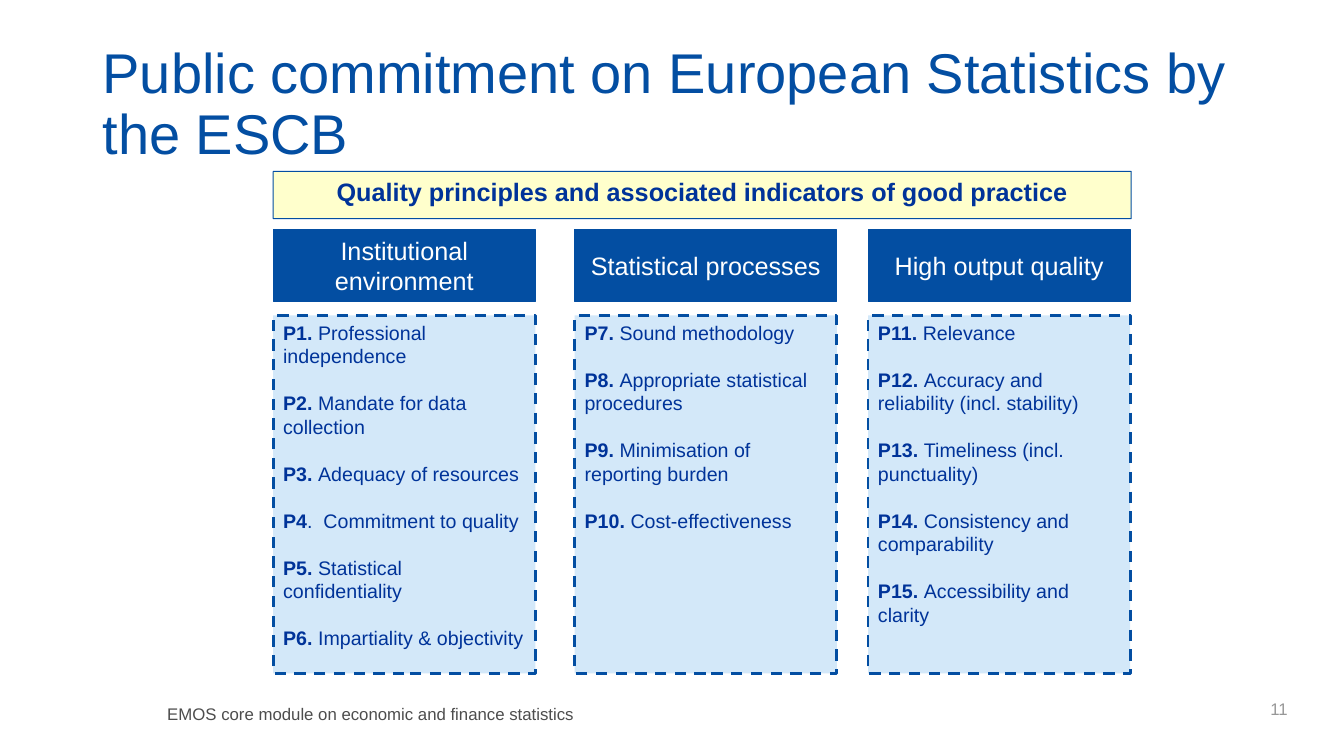
from pptx import Presentation
from pptx.dml.color import RGBColor
from pptx.enum.dml import MSO_LINE
from pptx.enum.shapes import MSO_SHAPE
from pptx.enum.text import MSO_ANCHOR, PP_ALIGN
from pptx.util import Inches, Pt

RECT = MSO_SHAPE.RECTANGLE
ROUNDED = MSO_SHAPE.ROUNDED_RECTANGLE
DASH = MSO_LINE.DASH
TOP, MIDDLE = MSO_ANCHOR.TOP, MSO_ANCHOR.MIDDLE
LEFT, CENTER, RIGHT = PP_ALIGN.LEFT, PP_ALIGN.CENTER, PP_ALIGN.RIGHT

BLUE, NAVY, PALE_BLUE, CREAM = "034EA2", "003399", "D3E8F9", "FFFFCC"
COLUMN_WIDTH = 2.6

PILLARS = [
    (2.71, "Institutional environment", [
        ("P1. ", "Professional independence"),
        ("P2. ", "Mandate for data collection"),
        ("P3. ", "Adequacy of resources"),
        ("P4", ".  Commitment to quality"),
        ("P5. ", "Statistical confidentiality"),
        ("P6. ", "Impartiality & objectivity"),
    ]),
    (5.7, "Statistical processes", [
        ("P7. ", "Sound methodology"),
        ("P8. ", "Appropriate statistical procedures"),
        ("P9. ", "Minimisation of reporting burden"),
        ("P10. ", "Cost-effectiveness"),
    ]),
    (8.61, "High output quality", [
        ("P11. ", "Relevance"),
        ("P12. ", "Accuracy and reliability (incl. stability)"),
        ("P13. ", "Timeliness (incl. punctuality)"),
        ("P14. ", "Consistency and comparability"),
        ("P15. ", "Accessibility and clarity"),
    ]),
]


def rgb(value):
    return RGBColor.from_string(value)


class SlideBuilder:
    font_name = "Arial"
    principle_size = 14
    principle_gap = 16.8

    def __init__(self, slide):
        self.slide = slide

    def style(self, run, size, color, bold=False):
        run.font.name = self.font_name
        run.font.size = Pt(size)
        run.font.color.rgb = rgb(color)
        run.font.bold = bold

    def set_text(self, frame, text, size, color, bold=False, align=LEFT, anchor=TOP):
        frame.word_wrap = True
        frame.vertical_anchor = anchor
        frame.text = text
        paragraph = frame.paragraphs[0]
        paragraph.alignment = align
        self.style(paragraph.runs[0], size, color, bold)
        return paragraph

    def label(self, box, text, size, color, **layout):
        holder = self.slide.shapes.add_textbox(*map(Inches, box))
        return self.set_text(holder.text_frame, text, size, color, **layout)

    def panel(self, kind, box, fill, line_width=0.75):
        panel = self.slide.shapes.add_shape(kind, *map(Inches, box))
        panel.shadow.inherit = False
        panel.fill.solid()
        panel.fill.fore_color.rgb = rgb(fill)
        panel.line.color.rgb = rgb(BLUE)
        panel.line.width = Pt(line_width)
        return panel

    def banner(self, box, text):
        banner = self.panel(ROUNDED, box, CREAM)
        banner.adjustments[0] = 0.01
        self.set_text(banner.text_frame, text, 18, NAVY, bold=True, align=CENTER)

    def heading(self, box, text):
        heading = self.panel(RECT, box, BLUE)
        self.set_text(heading.text_frame, text, 18, "FFFFFF", align=CENTER, anchor=MIDDLE)

    def principles(self, box, entries):
        panel = self.panel(RECT, box, PALE_BLUE, 2)
        panel.line.dash_style = DASH
        frame = panel.text_frame
        frame.word_wrap = True
        frame.vertical_anchor = TOP
        for index, (code, principle) in enumerate(entries):
            paragraph = frame.add_paragraph() if index else frame.paragraphs[0]
            paragraph.alignment = LEFT
            if index:
                paragraph.space_before = Pt(self.principle_gap)
            for text, bold in ((code, True), (principle, False)):
                run = paragraph.add_run()
                run.text = text
                self.style(run, self.principle_size, NAVY, bold)


def main():
    presentation = Presentation()
    presentation.slide_width = Inches(13.33)
    presentation.slide_height = Inches(7.5)
    builder = SlideBuilder(presentation.slides.add_slide(presentation.slide_layouts[6]))

    builder.label((1.56, 6.93, 6.08, 0.3),
                  "EMOS core module on economic and finance statistics", 12, "4D4D4D")
    builder.label((9.87, 6.83, 3, 0.4), "11", 12, "979797", align=RIGHT, anchor=MIDDLE)
    title = builder.label((0.92, 0.4, 11.93, 1.3),
                          "Public commitment on European Statistics by the ESCB", 40, BLUE)
    title.line_spacing = 0.9
    builder.banner((2.71, 1.7, 8.51, 0.47),
                   "Quality principles and associated indicators of good practice")
    for left, heading, entries in PILLARS:
        builder.principles((left, 3.13, COLUMN_WIDTH, 3.55), entries)
        builder.heading((left, 2.28, COLUMN_WIDTH, 0.71), heading)

    presentation.save("out.pptx")


if __name__ == "__main__":
    main()
